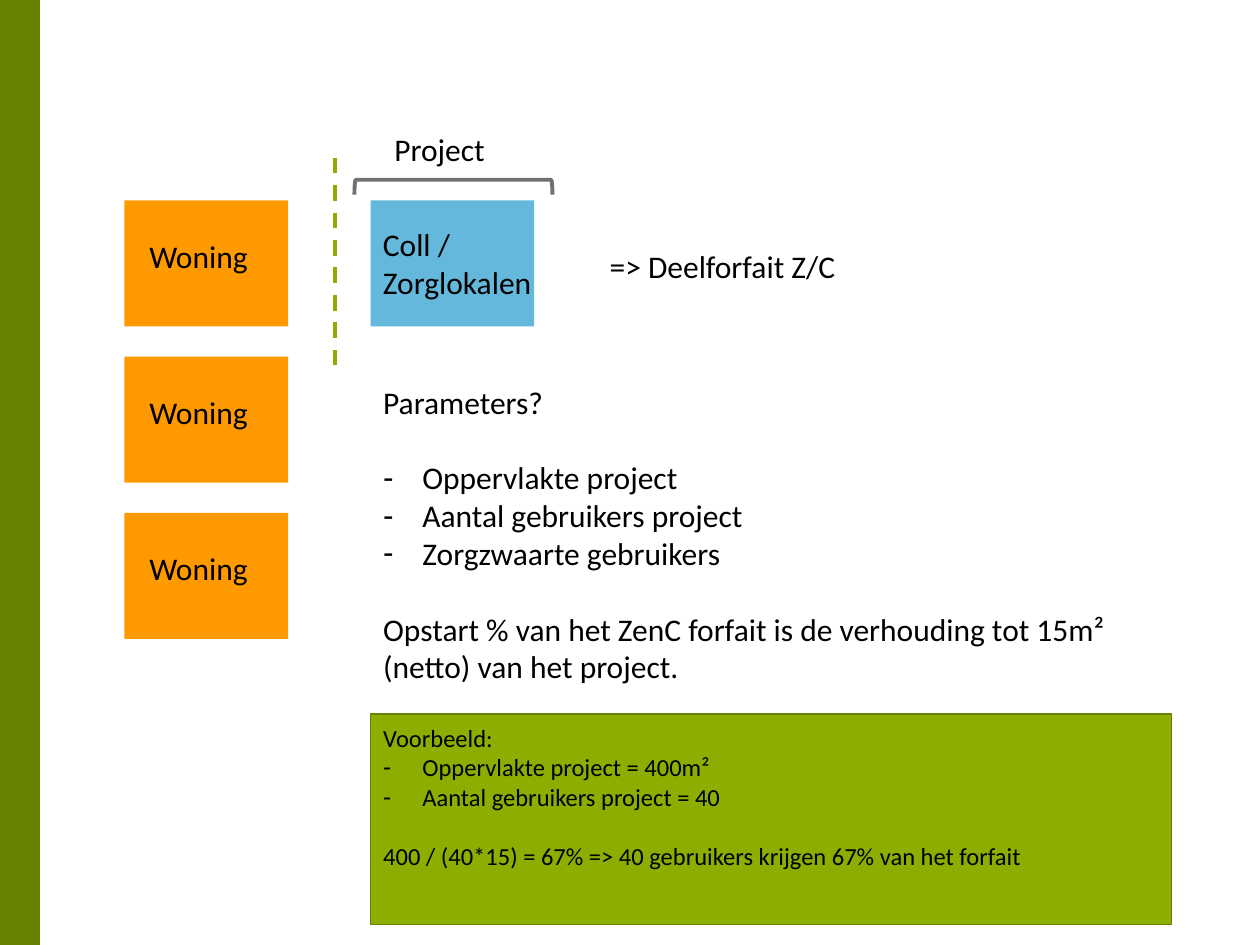
from lxml import etree
from pptx import Presentation
from pptx.dml.color import RGBColor
from pptx.enum.dml import MSO_LINE_DASH_STYLE as Dash
from pptx.enum.shapes import MSO_CONNECTOR as Connector, MSO_SHAPE as Shape
from pptx.enum.text import MSO_ANCHOR as Anchor, MSO_AUTO_SIZE as AutoSize, PP_ALIGN as Align
from pptx.oxml.ns import qn
from pptx.util import Cm, Pt

COLORS = {
    "sidebar": "688200",
    "border": "678100",
    "green": "8BAE00",
    "orange": "FF9900",
    "blue": "63B8DC",
    "gray": "717171",
    "text": "000000",
}
HANGING = Cm(0.79)
# text, size, bulleted, space before
PARAMETERS = [
    ("Parameters?", 18, False, 0),
    ("Oppervlakte project", 18, True, 21.6),
    ("Aantal gebruikers project", 18, True, 0),
    ("Zorgzwaarte gebruikers", 18, True, 0),
    ("Opstart % van het ZenC forfait is de verhouding tot 15m² (netto) van het project.",
     18, False, 21.6),
    ("Voorbeeld:", 14, False, 21.6),
    ("Oppervlakte project = 400m²", 14, True, 0),
    ("Aantal gebruikers project = 40", 14, True, 0),
    ("400 / (40*15) = 67% => 40 gebruikers krijgen 67% van het forfait", 14, False, 16.8),
]


def color(name):
    return RGBColor.from_string(COLORS[name])


def format_font(paragraph, size=18):
    paragraph.font.name = "Calibri"
    paragraph.font.size = Pt(size)
    paragraph.font.color.rgb = color("text")


def add_block(slide, left, top, width, height, fill, border=None):
    block = slide.shapes.add_shape(Shape.RECTANGLE, Cm(left), Cm(top), Cm(width), Cm(height))
    block.shadow.inherit = False
    block.fill.solid()
    block.fill.fore_color.rgb = color(fill)
    if border:
        block.line.color.rgb = color(border)
        block.line.width = Pt(1)
    else:
        block.line.fill.background()


def add_label(slide, text, left, top, width, height=1.02):
    frame = slide.shapes.add_textbox(Cm(left), Cm(top), Cm(width), Cm(height)).text_frame
    frame.word_wrap = True
    paragraph = frame.paragraphs[0]
    paragraph.text = text
    format_font(paragraph)


def add_homes(slide, left, top, width, height, gap=0.61, count=3):
    for row in range(count):
        home_top = top + row * (height + gap)
        add_block(slide, left, home_top, width, height, "orange")
        add_label(slide, "Woning", left + 0.25, home_top + 0.61, 2.77)


def add_project(slide, left, top, width, height):
    """Care rooms under a bracket, split from the homes by a dashed line."""
    add_block(slide, left, top, width, height, "blue")

    bracket = slide.shapes.add_shape(
        Shape.LEFT_BRACKET, Cm(left + 1.52), Cm(top - 2.26), Cm(0.3), Cm(3.99))
    bracket.rotation = 90
    bracket.shadow.inherit = False
    bracket.fill.background()
    bracket.line.color.rgb = color("gray")
    bracket.line.width = Pt(2.25)

    add_label(slide, "Project", left + 0.23, top - 1.55, 2.41)
    add_label(slide, "Coll / Zorglokalen", left, top + 0.38, 3.63, 1.8)
    add_label(slide, "=> Deelforfait Z/C", left + 4.57, top + 0.81, 12.17)

    divider_x = Cm(left - 0.71)
    divider = slide.shapes.add_connector(
        Connector.STRAIGHT, divider_x, Cm(top - 0.86), divider_x, Cm(top + 3.55))
    divider.line.color.rgb = color("green")
    divider.line.width = Pt(2.25)
    divider.line.dash_style = Dash.DASH
    etree.SubElement(divider._element.spPr, qn("a:effectLst"))


def set_bullet(paragraph, bulleted):
    properties = paragraph._p.get_or_add_pPr()
    indent = HANGING if bulleted else 0
    properties.set("marL", str(indent))
    properties.set("indent", str(-indent))
    if bulleted:
        etree.SubElement(properties, qn("a:buFontTx"))
        etree.SubElement(properties, qn("a:buChar"), char="-")
    else:
        etree.SubElement(properties, qn("a:buNone"))


def add_parameters(slide, left, top, width, height):
    """Parameter list whose last lines lie on the green example panel."""
    add_block(slide, left, top + 6.81, 16.15, 4.24, "green", "border")

    body = slide.placeholders[1]
    body.left, body.top, body.width, body.height = Cm(left), Cm(top), Cm(width), Cm(height)
    slide.shapes._spTree.append(body._element)  # in front of the panel
    frame = body.text_frame
    frame.word_wrap = True
    frame.auto_size = AutoSize.NONE
    frame.vertical_anchor = Anchor.TOP
    for index, (text, size, bulleted, space) in enumerate(PARAMETERS):
        paragraph = frame.add_paragraph() if index else frame.paragraphs[0]
        paragraph.text = text
        set_bullet(paragraph, bulleted)
        paragraph.alignment = Align.LEFT
        paragraph.space_before = Pt(space)
        format_font(paragraph, size)


def main():
    presentation = Presentation()
    presentation.slide_width, presentation.slide_height = Cm(25.4), Cm(19.05)
    slide = presentation.slides.add_slide(presentation.slide_layouts[1])
    title = slide.shapes.title._element
    title.getparent().remove(title)

    add_block(slide, 0, 0, 0.79, 19.05, "sidebar", "border")
    add_homes(slide, 2.51, 4.04, 3.3, 2.54)
    add_project(slide, 7.47, 4.04, 3.3, 2.54)
    add_parameters(slide, 7.47, 7.59, 16.74, 10.95)
    presentation.save("out.pptx")


if __name__ == "__main__":
    main()
